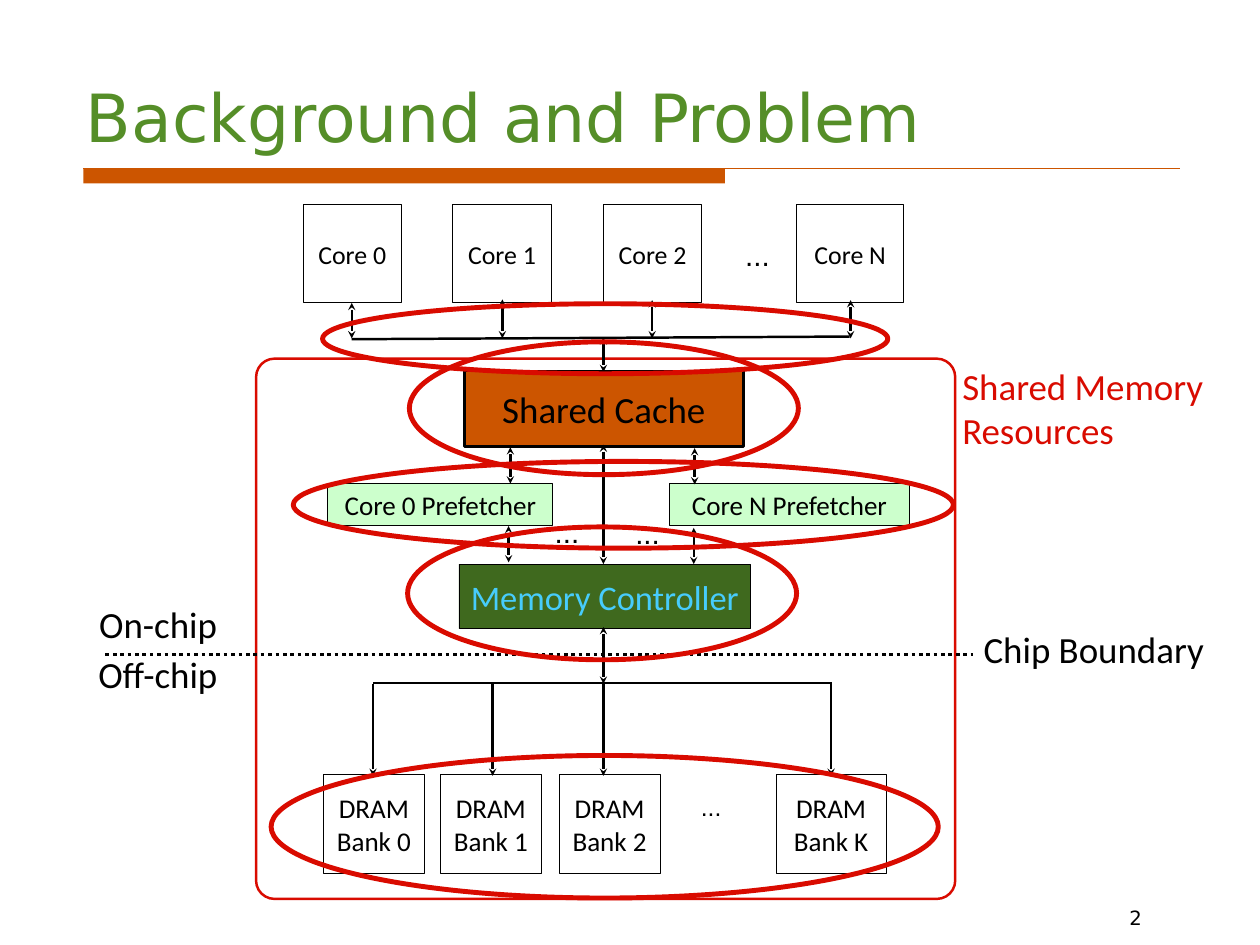
from lxml import etree
from pptx import Presentation
from pptx.dml.color import RGBColor
from pptx.enum import dml, shapes, text
from pptx.oxml.ns import qn
from pptx.util import Inches, Pt

BLACK = RGBColor(0x00, 0x00, 0x00)
WHITE = RGBColor(0xFF, 0xFF, 0xFF)
ORANGE = RGBColor(0xCC, 0x55, 0x00)
TITLE_GREEN = RGBColor(0x55, 0x8E, 0x28)
DARK_GREEN = RGBColor(0x3F, 0x69, 0x1E)
PALE_GREEN = RGBColor(0xCC, 0xFF, 0xCC)
SKY = RGBColor(0x47, 0xCC, 0xFC)
RED = RGBColor(0xD9, 0x0B, 0x00)

KIND = shapes.MSO_SHAPE
ALIGN = text.PP_ALIGN
ANCHOR = text.MSO_ANCHOR
MID_X = 6.81


def put_text(tf, content, size, font="Calibri", color=BLACK, align=ALIGN.LEFT,
             anchor=ANCHOR.TOP, wrap=True, insets=(0.06, 0, 0.06, 0)):
    tf.word_wrap = wrap
    tf.auto_size = text.MSO_AUTO_SIZE.NONE
    tf.vertical_anchor = anchor
    tf.margin_left, tf.margin_top, tf.margin_right, tf.margin_bottom = map(Inches, insets)
    for i, line in enumerate(content.split("\n")):
        p = tf.add_paragraph() if i else tf.paragraphs[0]
        p.alignment = align
        r = p.add_run()
        r.text = line
        r.font.size = Pt(size)
        r.font.name = font
        r.font.color.rgb = color


def add_shape(s, kind, at, fill=None, line=None, width=0.75):
    sp = s.shapes.add_shape(kind, *map(Inches, at))
    sp.shadow.inherit = False
    if fill is None:
        sp.fill.background()
    else:
        sp.fill.solid()
        sp.fill.fore_color.rgb = fill
    if line is None:
        sp.line.fill.background()
    else:
        sp.line.color.rgb = line
        sp.line.width = Pt(width)
    return sp


def add_box(s, at, content, size, fill=WHITE, color=BLACK, width=0.75):
    sp = add_shape(s, KIND.RECTANGLE, at, fill, BLACK, width)
    put_text(sp.text_frame, content, size, color=color, align=ALIGN.CENTER,
             anchor=ANCHOR.MIDDLE)


def add_label(s, at, content, size, **fmt):
    tb = s.shapes.add_textbox(*map(Inches, at))
    put_text(tb.text_frame, content, size, wrap=False, **fmt)


def add_line(s, x1, y1, x2, y2, color=BLACK, width=2, ends=(), dash=None):
    cn = s.shapes.add_connector(shapes.MSO_CONNECTOR.STRAIGHT,
                                *map(Inches, (x1, y1, x2, y2)))
    cn.line.color.rgb = color
    cn.line.width = Pt(width)
    if dash:
        cn.line.dash_style = dash
    ln = cn.line._get_or_add_ln()
    for end in ends:
        etree.SubElement(ln, qn("a:" + end)).set("type", "stealth")
    etree.SubElement(cn._element.spPr, qn("a:effectLst"))


def add_arrow(s, x, y1, y2, both=True):
    add_line(s, x, y1, x, y2, ends=("headEnd", "tailEnd") if both else ("tailEnd",))


def add_title(s):
    add_shape(s, KIND.RECTANGLE, (0.94, 1.9, 7.24, 0.17), ORANGE)
    add_line(s, 0.94, 1.9, 13.32, 1.9, ORANGE, 0.75)
    t = s.shapes.title
    t.left, t.top, t.width, t.height = map(Inches, (0.85, 0.44, 11.44, 1.38))
    put_text(t.text_frame, "Background and Problem", 54, "DejaVu Sans", TITLE_GREEN,
             anchor=ANCHOR.BOTTOM, insets=(0.12, 0.06, 0.18, 0.06))


def add_boxes(s):
    for name, x, w in (("0", 3.42, 1.11), ("1", 5.11, 1.11),
                       ("2", 6.81, 1.11), ("N", 8.99, 1.21)):
        add_box(s, (x, 2.31, w, 1.11), "Core " + name, 21)
    for name, x, w in (("0", 3.65, 1.14), ("1", 4.97, 1.14),
                       ("2", 6.31, 1.14), ("K", 8.76, 1.24)):
        add_box(s, (x, 8.75, w, 1.11), "DRAM\nBank " + name, 22)
    add_box(s, (5.24, 4.19, 3.15, 0.85), "Shared Cache", 30, ORANGE, width=2)
    add_box(s, (5.18, 6.37, 3.29, 0.73), "Memory Controller", 28, DARK_GREEN, SKY)
    for name, x, w in (("0", 3.7, 2.54), ("N", 7.56, 2.7)):
        add_box(s, (x, 5.46, w, 0.47), f"Core {name} Prefetcher", 22, PALE_GREEN)
    frame = add_shape(s, KIND.ROUNDED_RECTANGLE, (2.89, 4.05, 7.89, 6.1), None, RED, 2)
    frame.adjustments[0] = 0.034


def add_wiring(s):
    for x, top in ((3.97, 3.42), (5.67, 3.38), (7.36, 3.39), (9.6, 3.39)):
        add_arrow(s, x, top, 3.82)
    add_line(s, 3.97, 3.83, 9.59, 3.8)
    for top, bottom in ((3.81, 4.2), (5.02, 6.37), (7.08, 7.72)):
        add_arrow(s, MID_X, top, bottom)
    for x, top in ((5.76, 5.05), (5.74, 5.94), (7.84, 5.06), (7.83, 5.96)):
        add_arrow(s, x, top, top + 0.41)
    add_line(s, 4.21, 7.71, 9.39, 7.71)
    for x in (4.21, 5.56, MID_X, 9.38):
        add_arrow(s, x, 7.72, 8.76, both=False)
    add_line(s, 1.19, 7.39, 10.98, 7.39, width=3, dash=dml.MSO_LINE.ROUND_DOT)


def add_labels(s):
    for x, y in ((8.35, 2.67), (6.2, 5.8), (7.11, 5.81)):
        add_label(s, (x, y, 0.47, 0.49), "...", 24, font="Arial")
    add_label(s, (7.85, 8.94, 0.42, 0.42), "...", 20, font="Arial")
    add_label(s, (10.8, 4.1, 2.89, 1.08), "Shared Memory\nResources", 30, color=RED)
    add_label(s, (11.04, 7.08, 2.74, 0.6), "Chip Boundary", 30)
    add_label(s, (1.06, 6.79, 1.56, 0.6), "On-chip", 30)
    add_label(s, (1.05, 7.36, 1.57, 0.6), "Off-chip", 30)
    add_label(s, (12.61, 10.18, 0.41, 0.38), "2", 16, font="DejaVu Sans",
              align=ALIGN.CENTER, insets=(0.1, 0.05, 0.1, 0.05))


def add_highlights(s):
    for at in ((4.62, 3.86, 4.39, 1.5), (4.6, 5.95, 4.39, 1.5),
               (3.64, 3.43, 6.38, 0.79), (3.06, 8.53, 7.53, 1.61),
               (3.31, 5.21, 7.45, 0.98)):
        add_shape(s, KIND.OVAL, at, None, RED, 4)


def main():
    prs = Presentation()
    prs.slide_width, prs.slide_height = Inches(14.22), Inches(10.67)
    s = prs.slides.add_slide(prs.slide_layouts[5])
    add_title(s)
    add_boxes(s)
    add_wiring(s)
    add_labels(s)
    add_highlights(s)
    prs.save("out.pptx")


if __name__ == "__main__":
    main()
